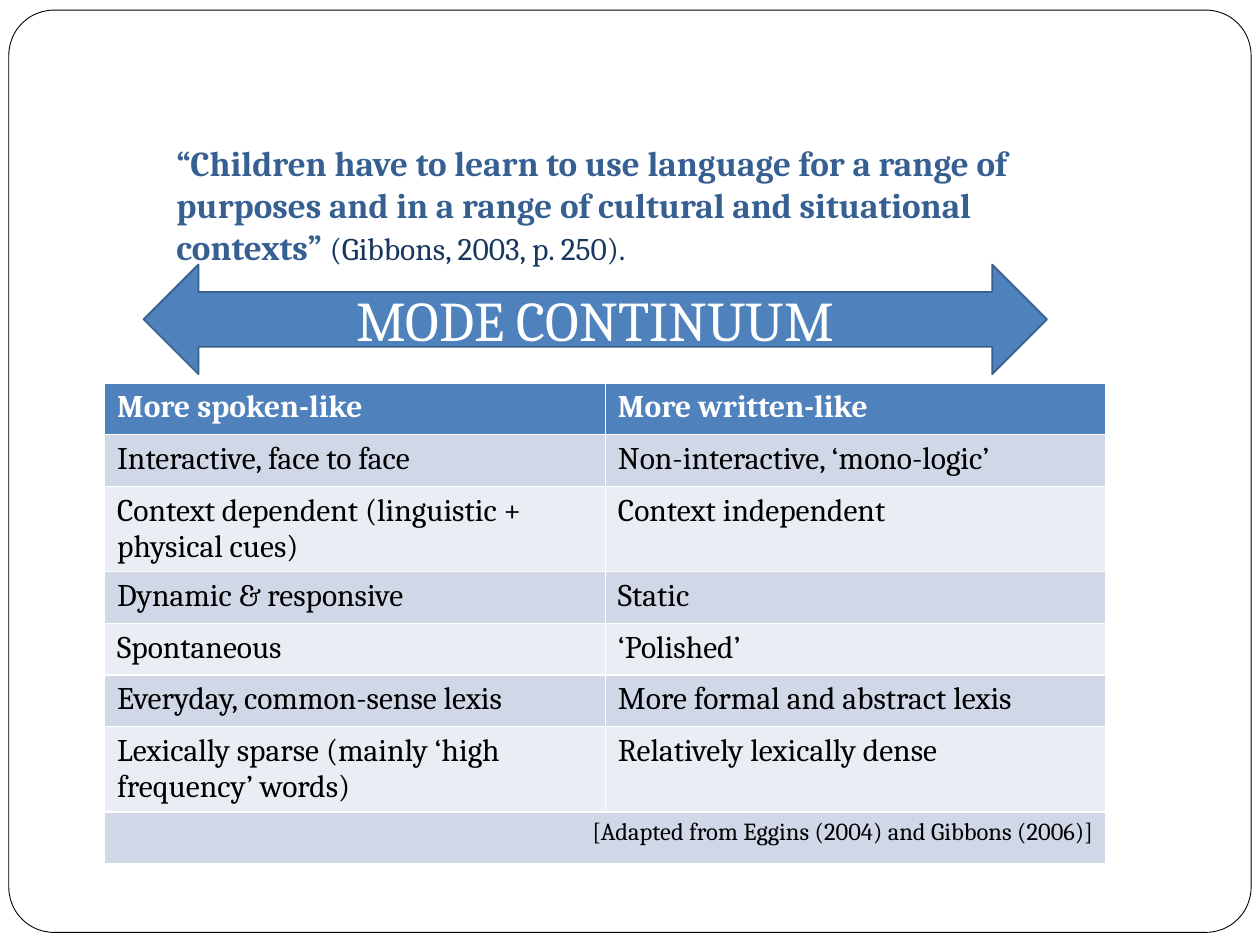
from pptx import Presentation
from pptx.dml.color import RGBColor
from pptx.enum import shapes, text
from pptx.util import Inches, Pt

FONT = "Cambria"
COLORS = {
    "white": "FFFFFF", "black": "000000", "blue": "4F81BD", "outline": "3A5F8C",
    "quote": "376092", "citation": "17375E", "odd_row": "D0D8E8", "even_row": "E9EDF4",
}
QUOTE = ("“Children have to learn to use language for a range of purposes "
         "and in a range of cultural and situational contexts” ")
CITATION = "(Gibbons, 2003, p. 250)."
CONTINUUM = [
    ("More spoken-like", "More written-like"),
    ("Interactive, face to face", "Non-interactive, ‘mono-logic’"),
    ("Context dependent (linguistic + physical cues)", "Context independent"),
    ("Dynamic & responsive", "Static"),
    ("Spontaneous", "‘Polished’"),
    ("Everyday, common-sense lexis", "More formal and abstract lexis"),
    ("Lexically sparse (mainly ‘high frequency’ words)", "Relatively lexically dense"),
]
SOURCE_NOTE = "[Adapted from Eggins (2004) and Gibbons (2006)]"


def color(name):
    return RGBColor.from_string(COLORS[name])


def format_run(run, size, color_name, bold=False):
    run.font.name = FONT
    run.font.size = Pt(size)
    run.font.bold = bold
    run.font.color.rgb = color(color_name)


def add_outlined_shape(slide, preset, box, fill, line, line_width):
    shape = slide.shapes.add_shape(preset, *map(Inches, box))
    shape.shadow.inherit = False
    shape.fill.solid()
    shape.fill.fore_color.rgb = color(fill)
    shape.line.color.rgb = color(line)
    shape.line.width = Pt(line_width)
    return shape


def add_frame(slide):
    """Put the rounded page frame behind everything else."""
    frame = add_outlined_shape(slide, shapes.MSO_SHAPE.ROUNDED_RECTANGLE,
                               (0.07, 0.08, 9.86, 7.32), "white", "black", 0.5)
    frame.adjustments[0] = 0.049
    slide.shapes._spTree.insert(2, frame._element)


def set_quote(title):
    title.left, title.top, title.width, title.height = map(Inches, (1.3, 1.07, 7.32, 1.1))
    frame = title.text_frame
    frame.word_wrap = True
    frame.auto_size = text.MSO_AUTO_SIZE.NONE
    frame.vertical_anchor = text.MSO_ANCHOR.TOP
    paragraph = frame.paragraphs[0]
    paragraph.alignment = text.PP_ALIGN.LEFT
    paragraph.text = QUOTE
    format_run(paragraph.runs[0], 20, "quote", bold=True)
    citation = paragraph.add_run()
    citation.text = CITATION
    format_run(citation, 18, "citation")


def add_continuum_arrow(slide):
    arrow = add_outlined_shape(slide, shapes.MSO_SHAPE.LEFT_RIGHT_ARROW,
                               (1.14, 2.1, 7.17, 0.87), "blue", "outline", 1)
    arrow.text_frame.text = "MODE CONTINUUM"
    arrow.text_frame.vertical_anchor = text.MSO_ANCHOR.MIDDLE
    paragraph = arrow.text_frame.paragraphs[0]
    paragraph.alignment = text.PP_ALIGN.CENTER
    format_run(paragraph.runs[0], 32, "white")


def fill_cell(cell, words, fill, size=18, font_color="black", bold=False):
    cell.fill.solid()
    cell.fill.fore_color.rgb = color(fill)
    cell.text_frame.text = words
    format_run(cell.text_frame.paragraphs[0].runs[0], size, font_color, bold)


def add_continuum_table(slide):
    row_count, row_height = len(CONTINUUM) + 1, 0.41
    table = slide.shapes.add_table(row_count, 2, Inches(0.83), Inches(3.04),
                                   Inches(7.95), Inches(row_height * row_count)).table
    for row, features in enumerate(CONTINUUM):
        for column, feature in enumerate(features):
            cell = table.cell(row, column)
            if row == 0:
                fill_cell(cell, feature, "blue", font_color="white", bold=True)
            else:
                fill_cell(cell, feature, "odd_row" if row % 2 else "even_row")
    note = table.cell(row_count - 1, 0)
    note.merge(table.cell(row_count - 1, 1))
    fill_cell(note, SOURCE_NOTE, "odd_row", size=14)
    note.text_frame.paragraphs[0].alignment = text.PP_ALIGN.RIGHT


def main():
    prs = Presentation()
    prs.slide_width, prs.slide_height = Inches(10), Inches(7.5)
    slide = prs.slides.add_slide(prs.slide_layouts.get_by_name("Title Only"))
    add_frame(slide)
    add_continuum_table(slide)
    add_continuum_arrow(slide)
    set_quote(slide.shapes.title)
    prs.save("out.pptx")


if __name__ == "__main__":
    main()
